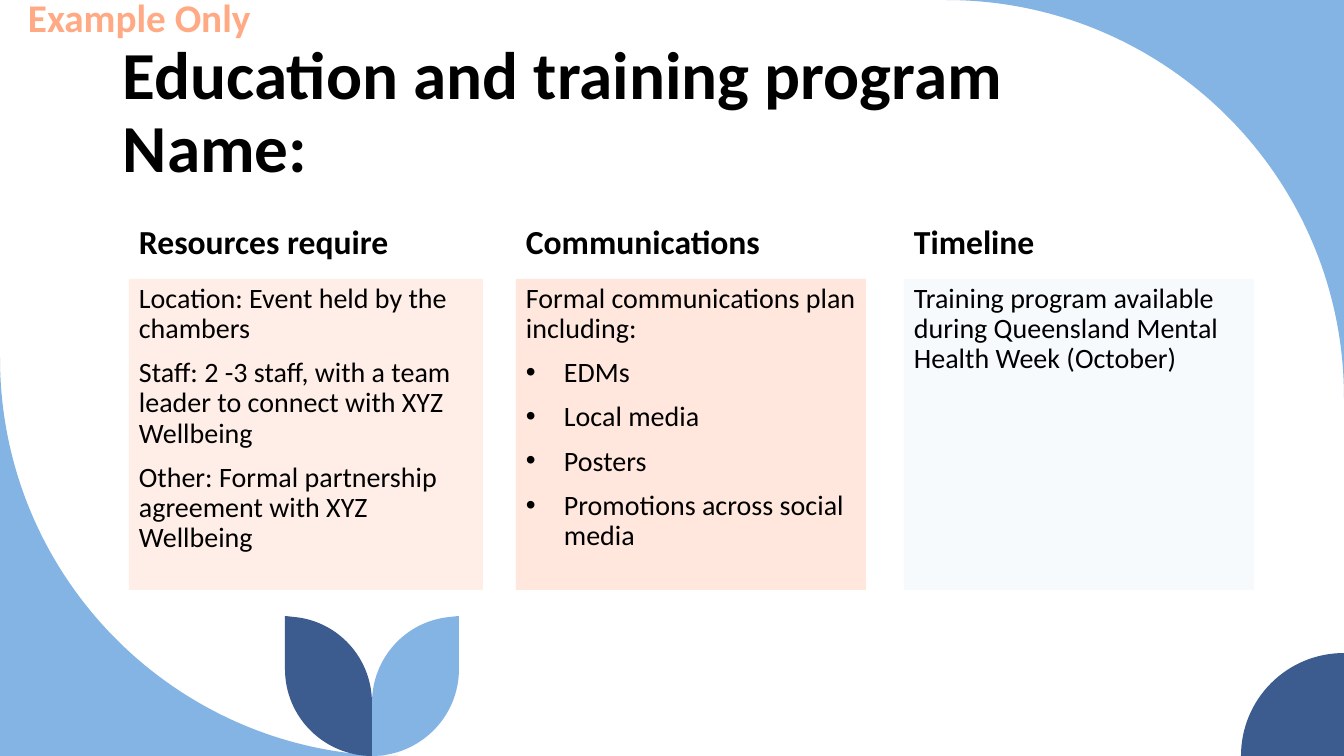
from lxml import etree
from pptx import Presentation
from pptx import util as u
from pptx.dml.color import RGBColor
from pptx.enum import shapes, text
from pptx.oxml.ns import qn

WIDTH, HEIGHT = 1344, 756
EMU_PER_PX = 914400 / 100.8
FONT = "Calibri"
BLACK, PEACH = "000000", "FFAA85"
SKY, NAVY = "83B4E3", "3C5C8F"

TAG = "Example Only"
TITLE = "Education and training program\vName:"

# heading, fill, left, width, paragraphs, bullets
COLUMNS = [
    ("Resources require", "FFEEE7", 129, 354,
     ["Location: Event held by the chambers",
      "Staff: 2 -3 staff, with a team leader to connect with XYZ Wellbeing",
      "Other: Formal partnership agreement with XYZ Wellbeing"], []),
    ("Communications", "FFE7DD", 516, 350,
     ["Formal communications plan including:"],
     ["EDMs", "Local media", "Posters", "Promotions across social media"]),
    ("Timeline", "F6FAFD", 904, 350,
     ["Training program available during Queensland Mental Health Week (October)"], []),
]
HEADING_TOP, HEADING_HEIGHT, HEADING_WIDTH = 221, 57, 350
CARD_TOP, CARD_HEIGHT = 279, 311
BULLET_INDENT = 38

# Each step is one point for a straight line, or three for a Bézier curve.
CORNER = [[(1344, 0)], [(1344, 398)], [(1344, 178), (1166, 0), (946, 0)]]
QUARTER_DISC = [[(1344, 756)], [(1344, 653)], [(1287, 653), (1241, 699), (1241, 756)]]
LEAF = [[(459, 616)], [(459, 669)], [(459, 718), (419, 756), (372, 756)],
        [(372, 703)], [(372, 658), (406, 621), (450, 617)]]
STEM_X = 372


def px(length):
    return u.Emu(round(length * EMU_PER_PX))


def color(hex_string):
    return RGBColor.from_string(hex_string)


def flip(outline, width=None, height=None):
    """Mirror an outline inside the given width and/or height."""
    return [[(x if width is None else width - x, y if height is None else height - y)
             for x, y in step] for step in outline]


def paint(shape, fill):
    shape.shadow.inherit = False
    shape.fill.solid()
    shape.fill.fore_color.rgb = color(fill)
    shape.line.fill.background()


def add_outline(parent, outline, fill):
    """Draw the outline through all its points, then merge each three-point step into a curve."""
    start, *rest = [(px(x), px(y)) for step in outline for x, y in step]
    builder = parent.shapes.build_freeform(*start)
    builder.add_line_segments(rest, close=True)
    shape = builder.convert_to_shape()
    lines = iter(list(shape._element.iter(qn("a:lnTo"))))
    for step in outline[1:]:
        segments = [next(lines) for _ in step]
        if len(step) == 3:
            segments[0].tag = qn("a:cubicBezTo")
            for segment in segments[1:]:
                segments[0].append(segment[0])
                segment.getparent().remove(segment)
    paint(shape, fill)


def add_bullet(paragraph):
    properties = paragraph._p.get_or_add_pPr()
    properties.set("marL", str(px(BULLET_INDENT)))
    properties.set("indent", str(-px(BULLET_INDENT)))
    etree.SubElement(properties, qn("a:buFont")).set("typeface", "Arial")
    etree.SubElement(properties, qn("a:buChar")).set("char", "•")


def write(shape, lines, size, bold=False, hue=BLACK, space=0, anchor=text.MSO_ANCHOR.TOP):
    frame = shape.text_frame
    frame.word_wrap = True
    frame.vertical_anchor = anchor
    frame.text = "\n".join(lines)
    for paragraph in frame.paragraphs:
        paragraph.alignment = text.PP_ALIGN.LEFT
        paragraph.line_spacing = 0.9
        paragraph.space_before = u.Pt(space)
        for run in paragraph.runs:
            run.font.name = FONT
            run.font.size = u.Pt(size)
            run.font.bold = bold
            run.font.color.rgb = color(hue)


def add_label(slide, box, *args, **kwargs):
    shape = slide.shapes.add_textbox(*map(px, box))
    write(shape, *args, **kwargs)
    return shape


def add_column(slide, heading, fill, left, width, paragraphs, bullets):
    card = slide.shapes.add_shape(shapes.MSO_SHAPE.RECTANGLE,
                                  *map(px, (left, CARD_TOP, width, CARD_HEIGHT)))
    paint(card, fill)
    write(card, paragraphs + bullets, 20, space=10)
    for paragraph in card.text_frame.paragraphs[len(paragraphs):]:
        add_bullet(paragraph)
    add_label(slide, (left, HEADING_TOP, HEADING_WIDTH, HEADING_HEIGHT),
              [heading], 24, bold=True, space=10)


def main():
    presentation = Presentation()
    presentation.slide_width, presentation.slide_height = px(WIDTH), px(HEIGHT)
    slide = presentation.slides.add_slide(presentation.slide_layouts[6])

    add_outline(slide, CORNER, SKY)
    add_outline(slide, flip(CORNER, WIDTH, HEIGHT), SKY)
    add_outline(slide, QUARTER_DISC, NAVY)
    leaves = slide.shapes.add_group_shape()
    add_outline(leaves, LEAF, SKY)
    add_outline(leaves, flip(LEAF, width=2 * STEM_X), NAVY)

    for column in COLUMNS:
        add_column(slide, *column)

    tag = add_label(slide, (18, 9, 829, 84), [TAG], 28, bold=True, hue=PEACH,
                    anchor=text.MSO_ANCHOR.BOTTOM)
    tag.text_frame.margin_bottom = px(52)
    add_label(slide, (113, 46, 1078, 146), [TITLE], 48, bold=True,
              anchor=text.MSO_ANCHOR.BOTTOM)
    presentation.save("out.pptx")


if __name__ == "__main__":
    main()
